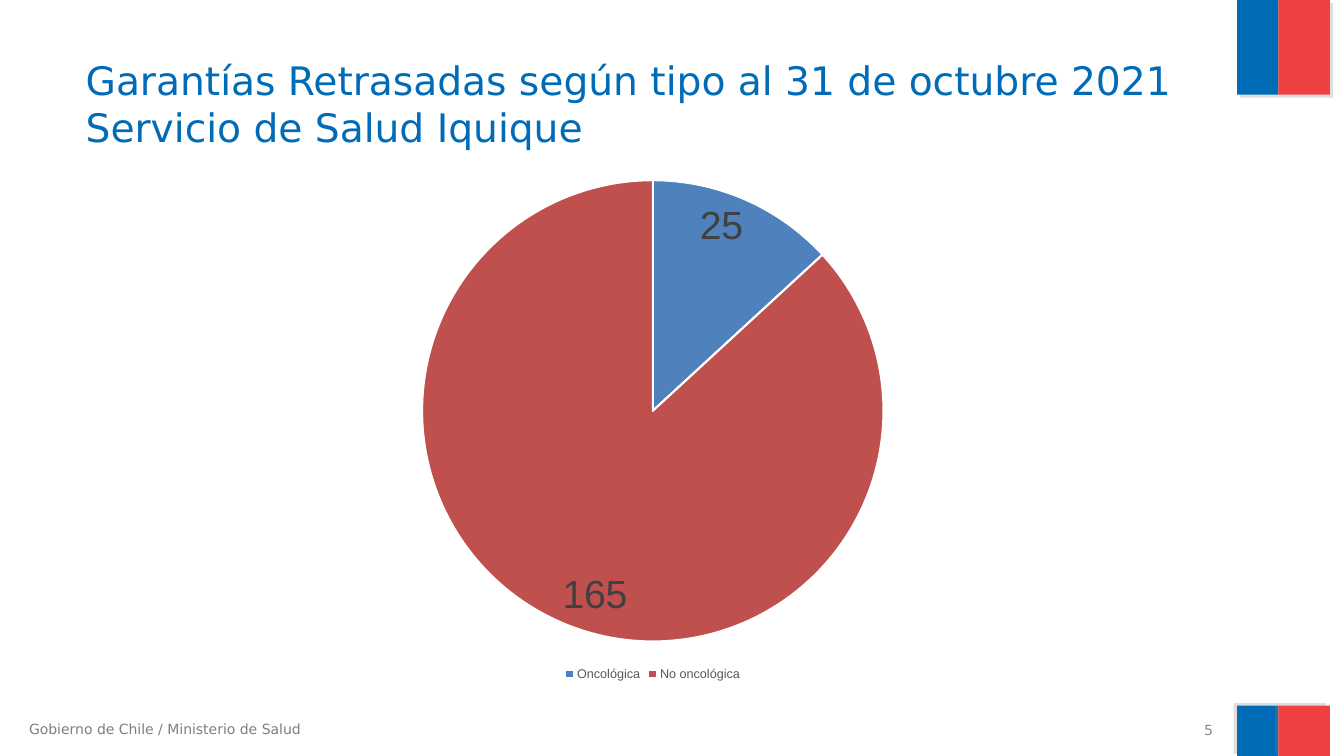
from dataclasses import dataclass

from lxml.etree import SubElement
from pptx import Presentation
from pptx.chart.data import CategoryChartData
from pptx.dml.color import RGBColor
from pptx.enum.chart import XL_CHART_TYPE as ChartType
from pptx.enum.chart import XL_LABEL_POSITION as LabelPosition
from pptx.enum.chart import XL_LEGEND_POSITION as LegendPosition
from pptx.enum.shapes import MSO_SHAPE as Shape
from pptx.enum.text import MSO_ANCHOR as Anchor
from pptx.enum.text import MSO_AUTO_SIZE as AutoSize
from pptx.enum.text import PP_ALIGN as Align
from pptx.oxml.ns import qn
from pptx.util import Inches, Pt

TITLE = "Garantías Retrasadas según tipo al 31 de octubre 2021\nServicio de Salud Iquique"
FOOTER = "Gobierno de Chile / Ministerio de Salud"
PAGE_NUMBER = "5"
GUARANTEES = {"Oncológica": 25, "No oncológica": 165}


@dataclass(frozen=True)
class Theme:
    blue: str = "006CB7"
    red: str = "EF4144"
    shadow: str = "808080"
    footer: str = "7F7F7F"
    number: str = "898989"
    white: str = "FFFFFF"
    slices: tuple = ("4F81BD", "C0504D")
    value: str = "404040"
    legend: str = "595959"
    text_font: str = "DejaVu Sans"
    chart_font: str = "Arial"
    title_size: int = 28
    value_size: int = 28
    small_size: int = 10
    legend_size: int = 9


THEME = Theme()

# Flag bands: top, height, shadow direction in degrees
FLAG_BANDS = [(0, 0.94, 45), (7, 0.5, 215)]
# Flag stripes: left, width, colour
FLAG_STRIPES = [(12.27, 0.41, THEME.blue), (12.68, 0.51, THEME.red)]


def style_font(font, name, size, color):
    font.name = name
    font.size = Pt(size)
    font.bold = False
    font.color.rgb = RGBColor.from_string(color)


def add_shadow(shape, degrees):
    """Give the shape a sharp, faint grey shadow cast in the given direction."""
    effects = SubElement(shape._element.spPr, qn("a:effectLst"))
    shadow = SubElement(effects, qn("a:outerShdw"), blurRad="0", dist=str(Pt(3)),
                        dir=str(degrees * 60000), algn="ctr", rotWithShape="0")
    color = SubElement(shadow, qn("a:srgbClr"), val=THEME.shadow)
    SubElement(color, qn("a:alpha"), val="25000")


def add_flags(page):
    for top, height, degrees in FLAG_BANDS:
        for left, width, color in FLAG_STRIPES:
            stripe = page.shapes.add_shape(Shape.RECTANGLE, Inches(left), Inches(top),
                                           Inches(width), Inches(height))
            stripe.fill.solid()
            stripe.fill.fore_color.rgb = RGBColor.from_string(color)
            stripe.line.fill.background()
            add_shadow(stripe, degrees)


def fill_title(page):
    title = page.shapes.title
    title.left, title.top = Inches(0.75), Inches(0.4)
    title.width, title.height = Inches(11.24), Inches(1.25)
    frame = title.text_frame
    frame.margin_left = frame.margin_right = Inches(0.1)
    frame.margin_top = frame.margin_bottom = Inches(0.1)
    frame.vertical_anchor = Anchor.MIDDLE
    frame.auto_size = AutoSize.NONE
    para = frame.paragraphs[0]
    para.text = TITLE
    para.alignment = Align.LEFT
    for span in para.runs:
        style_font(span.font, THEME.text_font, THEME.title_size, THEME.blue)


def add_note(page, text, left, top, width, height, color, align, anchor):
    box = page.shapes.add_textbox(Inches(left), Inches(top), Inches(width), Inches(height))
    frame = box.text_frame
    frame.word_wrap = True
    frame.vertical_anchor = anchor
    para = frame.paragraphs[0]
    para.text = text
    para.alignment = align
    style_font(para.runs[0].font, THEME.text_font, THEME.small_size, color)


def add_pie(page):
    data = CategoryChartData()
    data.categories = list(GUARANTEES)
    data.add_series("Series 1", list(GUARANTEES.values()))
    chart = page.shapes.add_chart(ChartType.PIE, Inches(2.38), Inches(1.65),
                                  Inches(8.19), Inches(5.15), data).chart
    chart.has_title = False
    chart.font.name = THEME.chart_font
    chart.font.size = Pt(THEME.small_size)

    chart.has_legend = True
    chart.legend.position = LegendPosition.BOTTOM
    chart.legend.include_in_layout = False
    style_font(chart.legend.font, THEME.chart_font, THEME.legend_size, THEME.legend)

    plot = chart.plots[0]
    plot.vary_by_categories = True
    for index, color in enumerate(THEME.slices):
        form = plot.series[0].points[index].format
        form.fill.solid()
        form.fill.fore_color.rgb = RGBColor.from_string(color)
        form.line.color.rgb = RGBColor.from_string(THEME.white)
        form.line.width = Pt(1.5)

    labels = plot.series[0].data_labels
    labels.show_value = True
    labels.show_percentage = False
    labels.position = LabelPosition.INSIDE_END
    style_font(labels.font, THEME.chart_font, THEME.value_size, THEME.value)


def main():
    deck = Presentation()
    deck.slide_width, deck.slide_height = Inches(13.33), Inches(7.5)
    page = deck.slides.add_slide(deck.slide_layouts.get_by_name("Title Only"))
    add_flags(page)
    add_note(page, FOOTER, 0.19, 7.1, 4.03, 0.27, THEME.footer, Align.LEFT, Anchor.TOP)
    fill_title(page)
    add_note(page, PAGE_NUMBER, 9.02, 7.14, 3.11, 0.21, THEME.number, Align.RIGHT, Anchor.MIDDLE)
    add_pie(page)
    deck.save("out.pptx")


if __name__ == "__main__":
    main()
